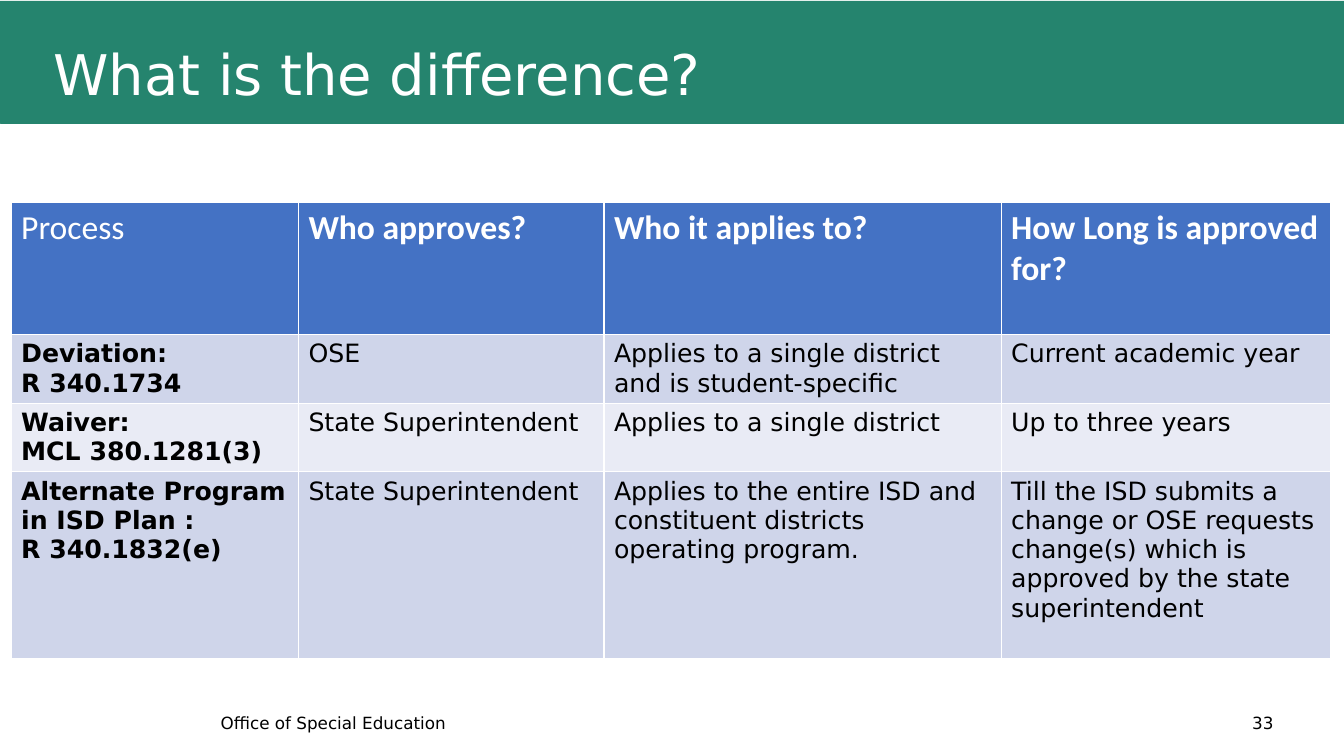
from dataclasses import dataclass

from pptx import Presentation
from pptx.dml.color import RGBColor
from pptx.enum.shapes import MSO_SHAPE
from pptx.enum.text import MSO_ANCHOR, PP_ALIGN
from pptx.util import Inches, Pt

TITLE = "What is the difference?"
HEADER = ["Process", "Who approves?", "Who it applies to?", "How Long is approved for?"]
PROCESSES = [
    ["Deviation:\nR 340.1734", "OSE",
     "Applies to a single district and is student-specific", "Current academic year"],
    ["Waiver:\nMCL 380.1281(3)", "State Superintendent",
     "Applies to a single district", "Up to three years"],
    ["Alternate Program in ISD Plan :\nR 340.1832(e)", "State Superintendent",
     "Applies to the entire ISD and constituent districts operating program.",
     "Till the ISD submits a change or OSE requests change(s) which is approved "
     "by the state superintendent"],
]
FOOTERS = [  # text, left, width, alignment
    ("Office of Special Education", 2.09, 4.5, PP_ALIGN.LEFT),
    ("33", 12.1, 0.85, PP_ALIGN.CENTER),
]

SLIDE_WIDTH, SLIDE_HEIGHT = 13.33, 7.5
BAND_TOP, BAND_HEIGHT = 0.01, 1.21
TITLE_BOX = (0.43, 0.31, 12.42, 0.91)
FOOTER_TOP, FOOTER_HEIGHT = 6.97, 0.4
TABLE_LEFT, TABLE_TOP = 0.11, 2.01
COLUMN_WIDTHS = [2.85, 3.03, 3.94, 3.27]
ROW_HEIGHTS = [1.31, 0.68, 0.68, 1.85]


@dataclass(frozen=True)
class Theme:
    band: RGBColor = RGBColor.from_string("25846E")
    header: RGBColor = RGBColor.from_string("4472C4")
    odd_row: RGBColor = RGBColor.from_string("CFD5EA")
    even_row: RGBColor = RGBColor.from_string("E9EBF5")
    light: RGBColor = RGBColor.from_string("FFFFFF")
    dark: RGBColor = RGBColor.from_string("000000")
    font: str = "DejaVu Sans"
    header_font: str = "Calibri"
    title_size: int = 40
    header_size: int = 24
    body_size: int = 18
    footer_size: int = 12


THEME = Theme()


def style_text(frame, size, color, name=THEME.font, bold=False, align=PP_ALIGN.LEFT):
    for para in frame.paragraphs:
        para.alignment = align
        para.font.name = name
        para.font.size = Pt(size)
        para.font.bold = bold
        para.font.color.rgb = color


def add_band(page):
    """Draw the title's background band behind everything else."""
    band = page.shapes.add_shape(MSO_SHAPE.RECTANGLE, 0, Inches(BAND_TOP),
                                 Inches(SLIDE_WIDTH), Inches(BAND_HEIGHT))
    band.shadow.inherit = False
    band.fill.solid()
    band.fill.fore_color.rgb = THEME.band
    band.line.color.rgb = THEME.band
    band.line.width = Pt(0.5)
    page.shapes._spTree.insert(2, band._element)


def set_title(page):
    title = page.shapes.title
    title.left, title.top, title.width, title.height = map(Inches, TITLE_BOX)
    frame = title.text_frame
    frame.text = TITLE
    frame.vertical_anchor = MSO_ANCHOR.MIDDLE
    frame.paragraphs[0].line_spacing = 0.9
    style_text(frame, THEME.title_size, THEME.light)


def add_process_table(page):
    rows = [HEADER] + PROCESSES
    table = page.shapes.add_table(
        len(rows), len(HEADER), Inches(TABLE_LEFT), Inches(TABLE_TOP),
        Inches(sum(COLUMN_WIDTHS)), Inches(sum(ROW_HEIGHTS))).table
    for column, width in zip(table.columns, COLUMN_WIDTHS):
        column.width = Inches(width)
    for row, height in zip(table.rows, ROW_HEIGHTS):
        row.height = Inches(height)

    for r, texts in enumerate(rows):
        for c, text in enumerate(texts):
            cell = table.cell(r, c)
            cell.text = text
            cell.fill.solid()
            if r == 0:
                cell.fill.fore_color.rgb = THEME.header
                style_text(cell.text_frame, THEME.header_size, THEME.light,
                           THEME.header_font, bold=c > 0)
            else:
                cell.fill.fore_color.rgb = THEME.odd_row if r % 2 else THEME.even_row
                style_text(cell.text_frame, THEME.body_size, THEME.dark, bold=c == 0)


def add_footers(page):
    for text, left, width, align in FOOTERS:
        box = page.shapes.add_textbox(Inches(left), Inches(FOOTER_TOP),
                                      Inches(width), Inches(FOOTER_HEIGHT))
        frame = box.text_frame
        frame.word_wrap = True
        frame.vertical_anchor = MSO_ANCHOR.MIDDLE
        frame.text = text
        style_text(frame, THEME.footer_size, THEME.dark, align=align)


def main():
    deck = Presentation()
    deck.slide_width = Inches(SLIDE_WIDTH)
    deck.slide_height = Inches(SLIDE_HEIGHT)
    page = deck.slides.add_slide(deck.slide_layouts[5])
    add_band(page)
    set_title(page)
    add_process_table(page)
    add_footers(page)
    deck.save("out.pptx")


if __name__ == "__main__":
    main()
